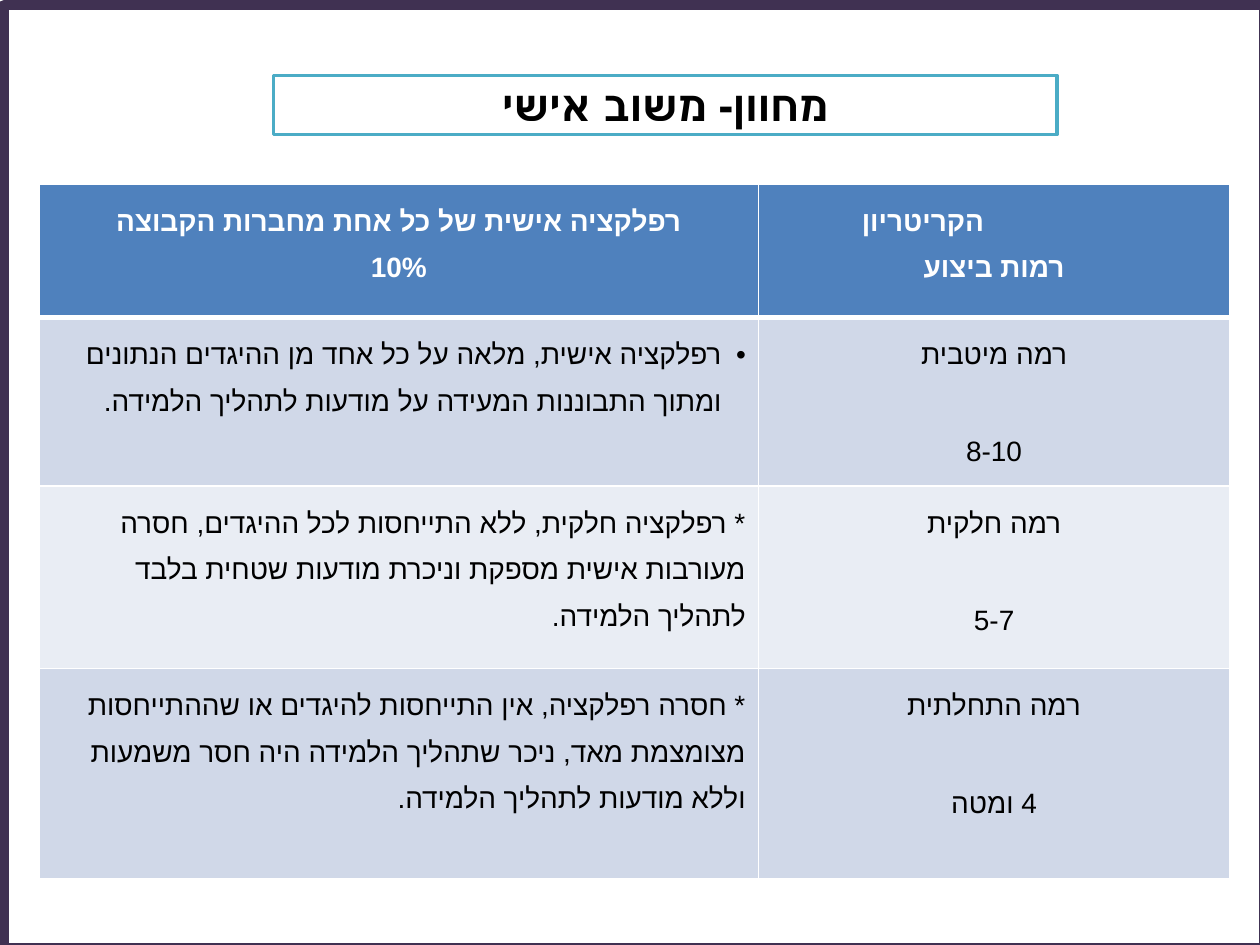
"""Build the personal feedback rubric slide."""
from lxml.etree import SubElement
from pptx import Presentation
from pptx.dml.color import RGBColor
from pptx.enum.shapes import MSO_SHAPE
from pptx.enum.text import MSO_ANCHOR, MSO_AUTO_SIZE, PP_ALIGN
from pptx.oxml.ns import qn
from pptx.util import Cm, Pt


def rgb(value):
    return RGBColor.from_string(value)


def add_border(tcPr, side, width):
    ln = SubElement(tcPr, qn(f"a:ln{side}"), w=str(Pt(width)))
    fill = SubElement(ln, qn("a:solidFill"))
    SubElement(fill, qn("a:srgbClr"), val="FFFFFF")


prs = Presentation()
prs.slide_width, prs.slide_height = Cm(25.4), Cm(19.05)
s = prs.slides.add_slide(prs.slide_layouts[5])

title = s.shapes.title
box = {"left": Cm(5.51), "top": Cm(1.52), "width": Cm(15.8), "height": Cm(1.19)}
for name, value in box.items():
    setattr(title, name, value)
title.fill.solid()
title.fill.fore_color.rgb = rgb("FFFFFF")
title.line.color.rgb = rgb("4BACC6")
title.line.width = Pt(2)
tf = title.text_frame
frame_format = {"text": "מחוון- משוב אישי", "word_wrap": True,
                "auto_size": MSO_AUTO_SIZE.NONE, "vertical_anchor": MSO_ANCHOR.MIDDLE}
for name, value in frame_format.items():
    setattr(tf, name, value)
p = tf.paragraphs[0]
p.alignment = PP_ALIGN.CENTER
font = p.runs[0].font
for name, value in {"name": "Arial", "size": Pt(24), "bold": True}.items():
    setattr(font, name, value)
font.color.rgb = rgb("000000")

C, R = PP_ALIGN.CENTER, PP_ALIGN.RIGHT
rows = [
    (2.69, "4F81BD",
     [("רפלקציה אישית של כל אחת מחברות הקבוצה", C), ("10%", C)],
     [("הקריטריון", R), ("רמות ביצוע", C)]),
    (3.4, "D0D8E8",
     [("רפלקציה אישית, מלאה על כל אחד מן ההיגדים הנתונים ומתוך התבוננות "
       "המעידה על מודעות לתהליך הלמידה.", R)],
     [("רמה מיטבית", C), ("8-10", C)]),
    (3.68, "E9EDF4",
     [("* רפלקציה חלקית, ללא התייחסות לכל ההיגדים, חסרה מעורבות אישית מספקת "
       "וניכרת מודעות שטחית בלבד לתהליך הלמידה.", R)],
     [("רמה חלקית", C), ("5-7", C)]),
    (4.24, "D0D8E8",
     [("* חסרה רפלקציה, אין התייחסות להיגדים או שההתייחסות מצומצמת מאד, ניכר "
       "שתהליך הלמידה היה חסר משמעות וללא מודעות לתהליך הלמידה.", R)],
     [("רמה התחלתית", C), ("4 ומטה", C)]),
]
table = s.shapes.add_table(4, 2, Cm(0.79), Cm(3.71), Cm(24), Cm(14.01)).table
for col, width in zip(table.columns, (14.5, 9.5)):
    col.width = Cm(width)

for i, (height, fill, *cells) in enumerate(rows):
    table.rows[i].height = Cm(height)
    header = i == 0
    for j, paragraphs in enumerate(cells):
        cell = table.cell(i, j)
        tcPr = cell._tc.get_or_add_tcPr()
        widths = {"L": 1, "R": 1, "T": 3 if i == 1 else 1, "B": 3 if header else 1}
        for side, width in widths.items():
            add_border(tcPr, side, width)
        cell.fill.solid()
        cell.fill.fore_color.rgb = rgb(fill)
        tf = cell.text_frame
        for k, (text, align) in enumerate(paragraphs):
            p = tf.add_paragraph() if k else tf.paragraphs[0]
            p.alignment = align
            p.line_spacing = 1.5
            if k and not header:
                p.space_before = Pt(29)
            p._p.get_or_add_pPr().set("rtl", "1")
            r = p.add_run()
            r.text = text
            for name, value in {"name": "Calibri", "size": Pt(16), "bold": header}.items():
                setattr(r.font, name, value)
            r.font.color.rgb = rgb("FFFFFF" if header else "000000")
            SubElement(r.font._element, qn("a:cs"), typeface="Arial")

pPr = table.cell(0, 1).text_frame.paragraphs[0]._p.pPr
pPr.set("marL", str(Cm(4.7)))
pPr = table.cell(1, 0).text_frame.paragraphs[0]._p.pPr
pPr.set("marL", str(Cm(0.48)))
pPr.set("indent", str(Cm(-0.48)))
SubElement(pPr, qn("a:buFont"), typeface="Arial")
SubElement(pPr, qn("a:buChar"), char="•")

sp = s.shapes.add_shape(MSO_SHAPE.RECTANGLE, Cm(0.08), Cm(0.1), Cm(25.4), Cm(19.02))
sp.shadow.inherit = False
sp.fill.background()
sp.line.color.rgb = rgb("403152")
sp.line.width = Pt(6)

prs.save("out.pptx")
